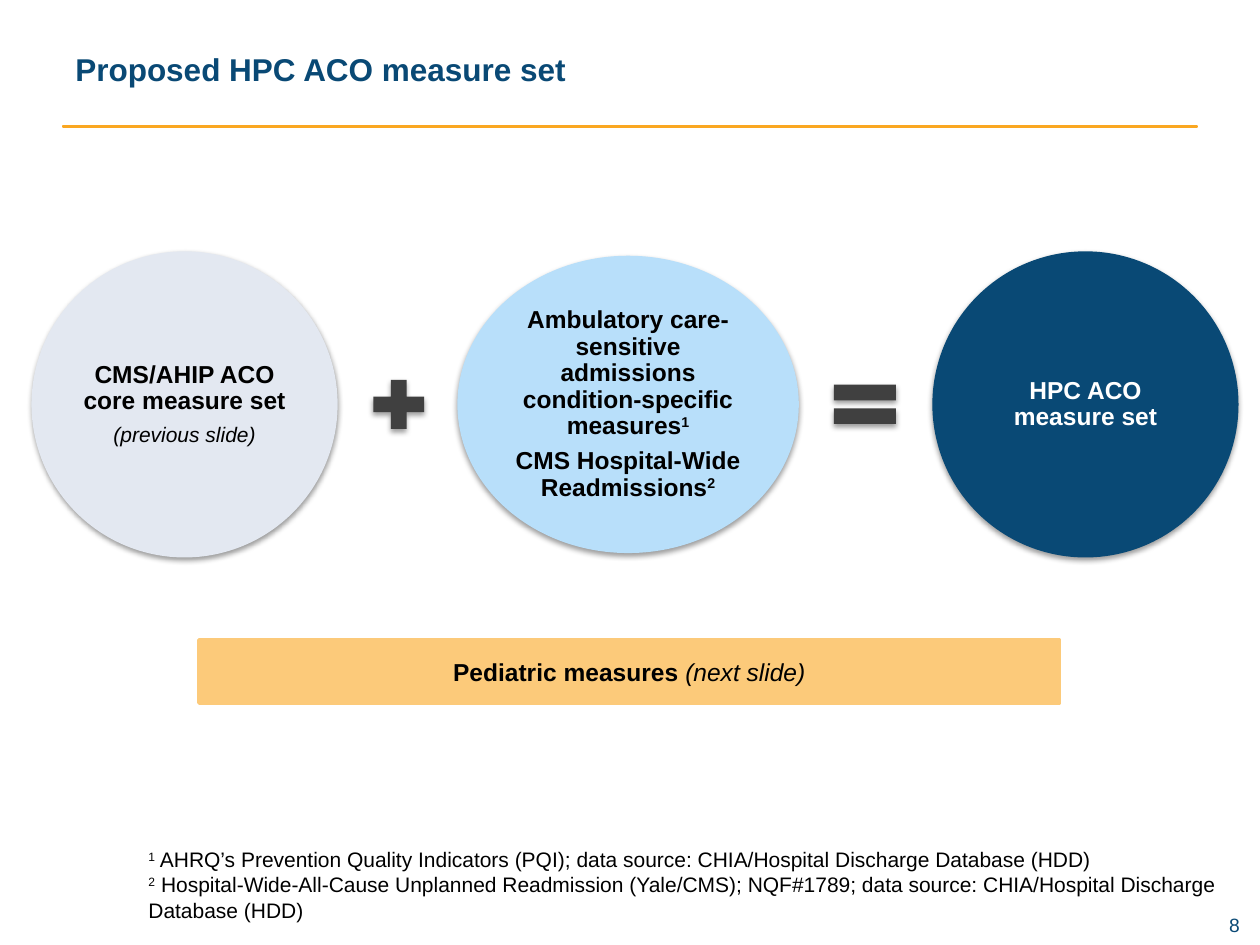
from dataclasses import dataclass

from lxml import etree
from pptx import Presentation
from pptx.dml.color import RGBColor
from pptx.enum.shapes import MSO_SHAPE
from pptx.enum.text import MSO_ANCHOR, PP_ALIGN
from pptx.oxml.ns import qn
from pptx.util import Inches, Pt

LEFT, CENTER, RIGHT = PP_ALIGN.LEFT, PP_ALIGN.CENTER, PP_ALIGN.RIGHT
TOP, MIDDLE = MSO_ANCHOR.TOP, MSO_ANCHOR.MIDDLE
RECTANGLE, OVAL = MSO_SHAPE.RECTANGLE, MSO_SHAPE.OVAL
PLUS, EQUAL = MSO_SHAPE.MATH_PLUS, MSO_SHAPE.MATH_EQUAL

AXIS = 3.21  # vertical middle of the equation


@dataclass(frozen=True)
class Theme:
    font: str = "Arial"
    navy: str = "094975"
    gold: str = "FAA721"
    sand: str = "FCCA7A"
    mist: str = "E3E8F1"
    sky: str = "B8DFFA"
    gray: str = "404040"
    black: str = "000000"
    white: str = "FFFFFF"
    title: int = 18
    body: int = 14
    note: int = 12
    number: int = 11


def span(text, **style):
    """One piece of text with its own format: size, color, bold, italic, raised."""
    return text, style


class SlideBuilder:
    def __init__(self, slide, theme):
        self.slide = slide
        self.theme = theme

    def fill_text(self, frame, paras, align=LEFT, anchor=TOP, inset=(0.1, 0.05),
                  line_spacing=None, space_after=0, **defaults):
        """Fill a text frame; each paragraph is a list of spans."""
        frame.word_wrap = True
        frame.vertical_anchor = anchor
        frame.margin_left = frame.margin_right = Inches(inset[0])
        frame.margin_top = frame.margin_bottom = Inches(inset[1])
        for index, spans in enumerate(paras):
            para = frame.add_paragraph() if index else frame.paragraphs[0]
            para.alignment = align
            para.space_after = Pt(space_after)
            if line_spacing:
                para.line_spacing = line_spacing
            for text, own in spans:
                style = {"size": self.theme.body, "color": self.theme.black,
                         **defaults, **own}
                run = para.add_run()
                run.text = text
                run.font.name = self.theme.font
                run.font.size = Pt(style["size"])
                run.font.color.rgb = RGBColor.from_string(style["color"])
                run.font.bold = style.get("bold", False)
                run.font.italic = style.get("italic", False)
                if style.get("raised"):
                    run.font._element.set("baseline", "30000")

    def text(self, left, top, width, height, paras, **style):
        box = self.slide.shapes.add_textbox(
            Inches(left), Inches(top), Inches(width), Inches(height))
        self.fill_text(box.text_frame, paras, **style)

    def shape(self, kind, left, top, width, height, fill, line_width=0, shadow=False):
        shape = self.slide.shapes.add_shape(
            kind, Inches(left), Inches(top), Inches(width), Inches(height))
        shape.fill.solid()
        shape.fill.fore_color.rgb = RGBColor.from_string(fill)
        if line_width:
            shape.line.color.rgb = RGBColor.from_string(fill)
            shape.line.width = Pt(line_width)
        else:
            shape.line.fill.background()
        shape.shadow.inherit = False
        if shadow:
            self.add_shadow(shape)
        return shape

    def add_shadow(self, shape):
        effects = shape._element.spPr.find(qn("a:effectLst"))
        outer = etree.SubElement(
            effects, qn("a:outerShdw"), blurRad=str(Pt(3.1)), dist=str(Pt(1.6)),
            dir="5400000", rotWithShape="0")
        color = etree.SubElement(outer, qn("a:srgbClr"), val=self.theme.black)
        etree.SubElement(color, qn("a:alpha"), val="38000")

    def circle(self, left, width, height, label_size, fill, paras, **style):
        """Ellipse on the equation's axis with a label centred inside it."""
        self.shape(OVAL, left, AXIS - height / 2, width, height, fill, shadow=True)
        label_width, label_height = label_size
        self.text(left + (width - label_width) / 2, AXIS - label_height / 2,
                  label_width, label_height, paras, align=CENTER, anchor=MIDDLE,
                  inset=(0.02, 0.02), line_spacing=0.9, space_after=5, **style)

    def operator(self, kind, left, width):
        height = 0.53
        self.shape(kind, left, AXIS - height / 2, width, height,
                   self.theme.gray, shadow=True)


def main():
    deck = Presentation()
    deck.slide_width, deck.slide_height = Inches(10), Inches(7.5)
    theme = Theme()
    page = SlideBuilder(deck.slides.add_slide(deck.slide_layouts[6]), theme)

    # Header and page number
    page.shape(RECTANGLE, 0.5, 1, 9, 0.01, theme.gold, line_width=1)
    page.text(7.42, 7.25, 2.42, 0.19, [[span("8")]], align=RIGHT, inset=(0, 0),
              size=theme.number, color=theme.navy)
    page.text(0.5, 0.17, 9, 0.75, [[span("Proposed HPC ACO measure set")]],
              anchor=MIDDLE, size=theme.title, color=theme.navy, bold=True)

    # Equation: core set + added measures = full set
    round_size, round_label = 2.43, (1.72, 1.72)
    page.circle(0.25, round_size, round_size, round_label, theme.mist, [
        [span("CMS/AHIP ACO core measure set", bold=True)],
        [span("(previous slide)", size=theme.note, italic=True)],
    ])
    page.operator(PLUS, 2.89, 0.55)
    page.circle(3.63, 2.71, 2.36, (1.91, 1.67), theme.sky, [
        [span("Ambulatory care-sensitive admissions condition-specific measures"),
         span("1", raised=True)],
        [span("CMS Hospital-Wide Readmissions"), span("2", raised=True)],
    ], bold=True)
    page.operator(EQUAL, 6.53, 0.67)
    page.circle(7.4, round_size, round_size, round_label, theme.navy,
                [[span("HPC ACO measure set")]], bold=True, color=theme.white)

    # Footnotes
    page.text(1.08, 6.67, 9.17, 0.71, [
        [span("1", raised=True),
         span(" AHRQ’s Prevention Quality Indicators (PQI); data source: "
              "CHIA/Hospital Discharge Database (HDD)")],
        [span("2", raised=True),
         span(" Hospital-Wide-All-Cause Unplanned Readmission (Yale/CMS); NQF#1789; "
              "data source: CHIA/Hospital Discharge Database (HDD)")],
    ], size=theme.note)

    # Pediatric bar
    bar = page.shape(RECTANGLE, 1.58, 5.08, 6.83, 0.5, theme.sand, line_width=2)
    page.fill_text(bar.text_frame, [[span("Pediatric measures ", bold=True),
                                     span("(next slide)", italic=True)]],
                   align=CENTER, anchor=MIDDLE)

    deck.save("out.pptx")


if __name__ == "__main__":
    main()
